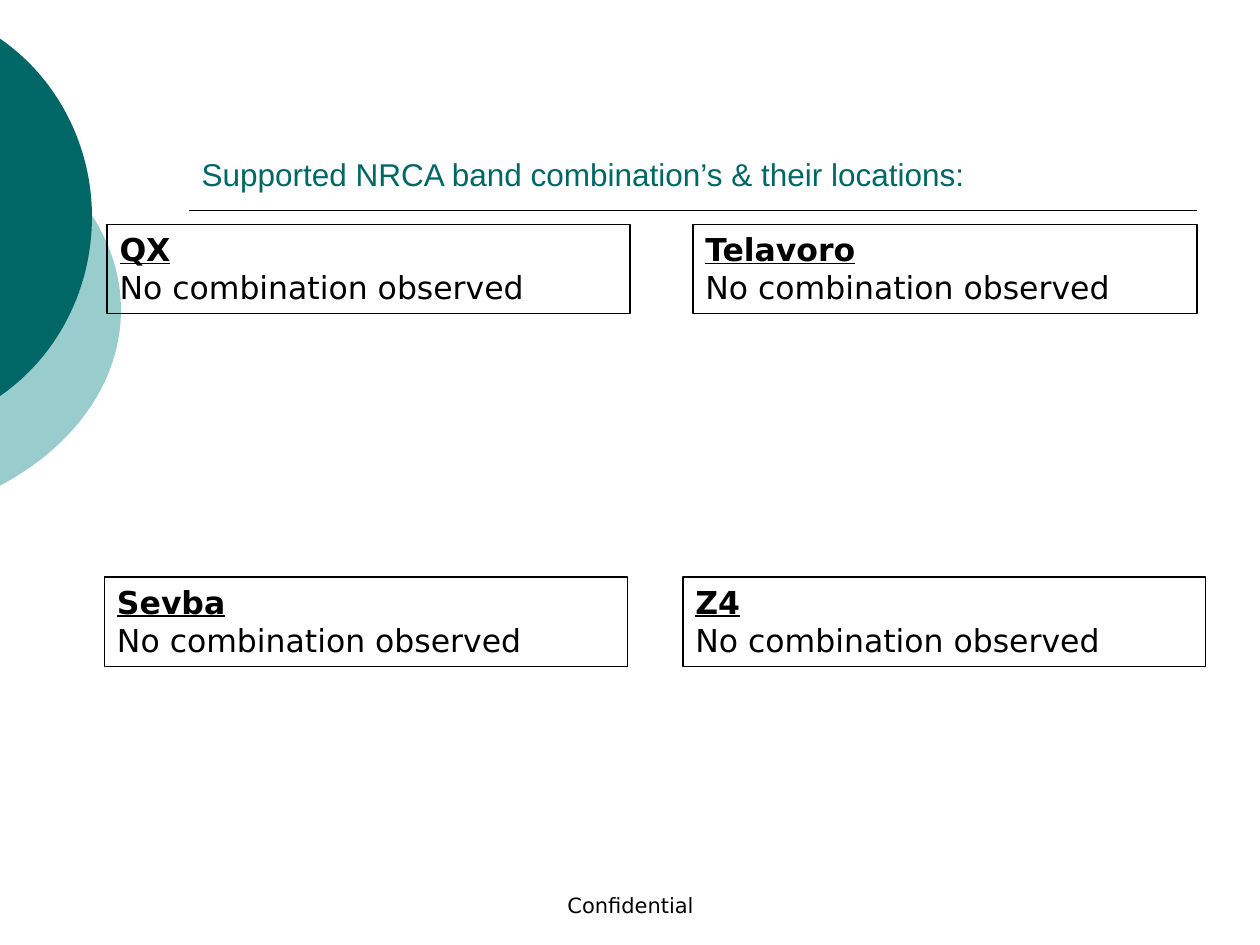
from pptx import Presentation
from pptx.dml.color import RGBColor
from pptx.enum.shapes import MSO_CONNECTOR as Connector, MSO_SHAPE as Shape
from pptx.enum.text import MSO_ANCHOR as Anchor, MSO_AUTO_SIZE as AutoSize, PP_ALIGN as Align
from pptx.oxml.ns import qn
from pptx.util import Inches, Pt
from lxml import etree

TEAL = RGBColor(0x00, 0x66, 0x66)
PALE_TEAL = RGBColor(0x99, 0xCC, 0xCC)
BLACK = RGBColor(0, 0, 0)
TITLE_FONT, BODY_FONT = "Arial", "DejaVu Sans"

# Visible edge of each disc: start point, then Bezier curves, in slide inches
PALE_START = (-0.01, 1.06)
PALE_CURVES = [[(0.6, 1.38), (0.96, 1.9), (0.96, 2.46)],
               [(0.96, 3.02), (0.6, 3.54), (-0.01, 3.86)]]
DARK_START = (-0.01, 0.3)
DARK_CURVES = [[(0.46, 0.62), (0.73, 1.16), (0.73, 1.72)],
               [(0.73, 2.29), (0.46, 2.83), (-0.01, 3.15)]]

# Operator name and its box: left, top, width, height
OPERATORS = [
    ("QX", (0.85, 1.78, 4.15, 0.71)),
    ("Telavoro", (5.5, 1.78, 4, 0.71)),
    ("Sevba", (0.83, 4.58, 4.15, 0.71)),
    ("Z4", (5.42, 4.58, 4.15, 0.71)),
]


def style(para, size, color=BLACK, name=BODY_FONT, bold=False, underline=False):
    font = para.font
    font.size, font.name = Pt(size), name
    font.bold, font.underline = bold, underline
    font.color.rgb = color


def add_disc(page, box, start, curves, color):
    left, top, width, height = map(Inches, box)
    builder = page.shapes.build_freeform(left, top)
    builder.add_line_segments([(left + width, top + height)], close=True)
    disc = builder.convert_to_shape()
    disc.shadow.inherit = False
    disc.fill.solid()
    disc.fill.fore_color.rgb = color
    disc.line.fill.background()

    # Swap the straight outline for true curves
    outline = disc._element.spPr.find(".//" + qn("a:path"))
    outline.set("w", str(width))
    outline.set("h", str(height))
    for segment in list(outline):
        outline.remove(segment)
    for tag, points in [("a:moveTo", [start])] + [("a:cubicBezTo", c) for c in curves]:
        segment = etree.SubElement(outline, qn(tag))
        for x, y in points:
            etree.SubElement(segment, qn("a:pt"),
                             x=str(Inches(x) - left), y=str(Inches(y) - top))
    etree.SubElement(outline, qn("a:close"))


def add_rule(page, left, top, width):
    rule = page.shapes.add_connector(Connector.STRAIGHT, Inches(left), Inches(top),
                                     Inches(left + width), Inches(top))
    rule.line.color.rgb = BLACK
    rule.line.width = Pt(1)
    etree.SubElement(rule._element.spPr, qn("a:effectLst"))


def set_title(page, box, text):
    title = page.shapes.title
    page.shapes._spTree.append(title._element)  # in front of the backdrop
    title.left, title.top, title.width, title.height = map(Inches, box)
    frame = title.text_frame
    frame.text = text
    frame.auto_size = AutoSize.NONE
    frame.vertical_anchor = Anchor.BOTTOM
    para = frame.paragraphs[0]
    para.alignment = Align.LEFT
    style(para, 18, TEAL, TITLE_FONT)


def add_footer(page, box, text):
    frame = page.shapes.add_textbox(*map(Inches, box)).text_frame
    frame.word_wrap = True
    frame.vertical_anchor = Anchor.BOTTOM
    frame.text = text
    para = frame.paragraphs[0]
    para.alignment = Align.CENTER
    style(para, 12)


def add_operator(page, box, name):
    panel = page.shapes.add_shape(Shape.RECTANGLE, *map(Inches, box))
    panel.shadow.inherit = False
    panel.fill.background()
    panel.line.color.rgb = BLACK
    panel.line.width = Pt(0.75)
    frame = panel.text_frame
    frame.word_wrap = True
    frame.auto_size = AutoSize.SHAPE_TO_FIT_TEXT
    frame.vertical_anchor = Anchor.TOP
    frame.text = f"{name}\nNo combination observed"
    heading, finding = frame.paragraphs
    heading.alignment = finding.alignment = Align.LEFT
    style(heading, 18, bold=True, underline=True)
    style(finding, 18)


def main():
    deck = Presentation()
    deck.slide_width, deck.slide_height = Inches(10), Inches(7.5)
    page = deck.slides.add_slide(deck.slide_layouts[5])

    # Backdrop
    add_disc(page, (-3.54, 0.75, 4.5, 3.42), PALE_START, PALE_CURVES, PALE_TEAL)
    add_disc(page, (-2.65, 0, 3.38, 3.45), DARK_START, DARK_CURVES, TEAL)
    add_rule(page, 1.5, 1.67, 8)

    # Title and footer
    set_title(page, (1.5, 0.33, 8, 1.25),
              "Supported NRCA band combination’s & their locations:")
    add_footer(page, (3.42, 6.83, 3.17, 0.5), "Confidential")

    # Operator panels
    for name, box in OPERATORS:
        add_operator(page, box, name)

    deck.save("out.pptx")


if __name__ == "__main__":
    main()
